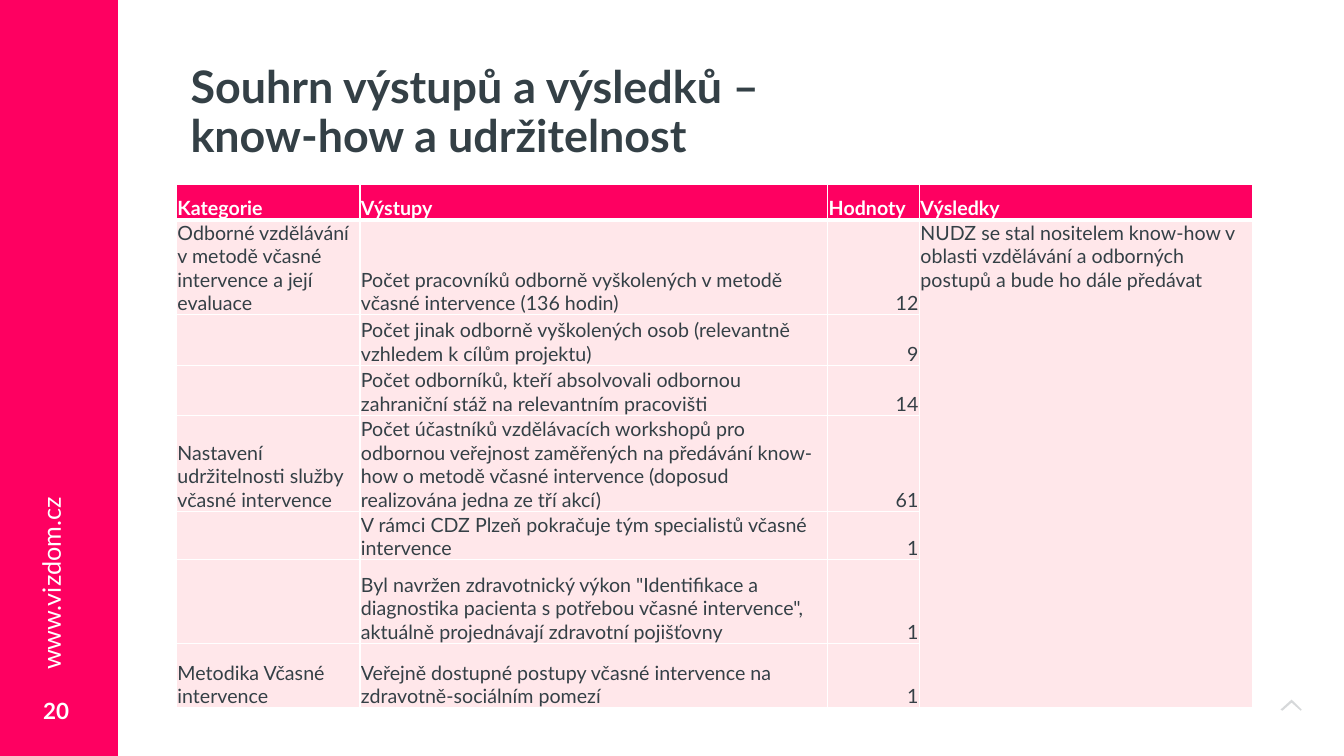
from lxml import etree
from pptx import Presentation
from pptx.dml.color import RGBColor
from pptx.enum import shapes, text
from pptx.oxml import ns
from pptx.util import Inches, Pt

PINK = RGBColor(0xFE, 0x00, 0x61)
BLUSH = RGBColor(0xFF, 0xE7, 0xEA)
SLATE = RGBColor(0x34, 0x40, 0x46)
WHITE = RGBColor(0xFF, 0xFF, 0xFF)

COLS = [1.82, 4.64, 0.91, 3.3]
ROWS = [0.35, 0.94, 0.5, 0.5, 0.95, 0.48, 0.83, 0.64]
HEAD = ["Kategorie", "Výstupy", "Hodnoty", "Výsledky"]
BODY = [
    ["Odborné vzdělávání v metodě včasné intervence a její evaluace",
     "Počet pracovníků odborně vyškolených v metodě včasné intervence (136 hodin)", "12",
     "NUDZ se stal nositelem know-how v oblasti vzdělávání a odborných postupů "
     "a bude ho dále předávat"],
    ["", "Počet jinak odborně vyškolených osob (relevantně vzhledem k cílům projektu)", "9", ""],
    ["", "Počet odborníků, kteří absolvovali odbornou zahraniční stáž "
     "na relevantním pracovišti", "14", ""],
    ["Nastavení udržitelnosti služby včasné intervence",
     "Počet účastníků vzdělávacích workshopů pro odbornou veřejnost zaměřených na předávání "
     "know-how o metodě včasné intervence (doposud realizována jedna ze tří akcí)", "61", ""],
    ["", "V rámci CDZ Plzeň pokračuje tým specialistů včasné intervence", "1", ""],
    ["", "Byl navržen zdravotnický výkon \"Identifikace a diagnostika pacienta s potřebou "
     "včasné intervence\", aktuálně projednávají zdravotní pojišťovny", "1", ""],
    ["Metodika Včasné intervence",
     "Veřejně dostupné postupy včasné intervence na zdravotně-sociálním pomezí", "1", ""],
]
CHEVRON = [(12.81, 6.94), (12.91, 7.04), (12.9, 7.05), (12.81, 6.97), (12.72, 7.05), (12.7, 7.04)]


class Deck:
    font = "Lato"

    def __init__(self, slide):
        self.slide = slide

    def run(self, para, words, size, color, bold=False):
        run = para.add_run()
        run.text = words
        font = run.font
        font.name, font.size, font.bold = self.font, Pt(size), bold
        font.color.rgb = color

    def paint(self, shape, color):
        shape.shadow.inherit = False
        shape.fill.solid()
        shape.fill.fore_color.rgb = color
        shape.line.fill.background()

    def bar(self, x, y, w, h, color):
        box = self.slide.shapes.add_shape(
            shapes.MSO_SHAPE.RECTANGLE, Inches(x), Inches(y), Inches(w), Inches(h))
        self.paint(box, color)

    def outline(self, points, color, alpha):
        """Draw a closed, filled polygon; alpha is the opacity in percent."""
        dots = [(Inches(x), Inches(y)) for x, y in points]
        form = self.slide.shapes.build_freeform(*dots[0])
        form.add_line_segments(dots[1:], close=True)
        shape = form.convert_to_shape()
        self.paint(shape, color)
        tone = shape.fill._xPr.find(".//" + ns.qn("a:srgbClr"))
        etree.SubElement(tone, ns.qn("a:alpha"), val=str(alpha * 1000))

    def label(self, x, y, w, h, lines, size, color, bold=False, turn=0,
              anchor=text.MSO_ANCHOR.TOP, inset=0.1, space=1.0):
        box = self.slide.shapes.add_textbox(Inches(x), Inches(y), Inches(w), Inches(h))
        box.rotation = turn
        frame = box.text_frame
        frame.word_wrap = True
        frame.vertical_anchor = anchor
        frame.margin_left = frame.margin_right = Inches(inset)
        para = frame.paragraphs[0]
        para.line_spacing = space
        for i, line in enumerate(lines):
            if i:
                para.add_line_break()
            self.run(para, line, size, color, bold)

    def edge(self, cell, widths):
        """Set white borders; widths are points for left, right, top, bottom."""
        props = cell._tc.get_or_add_tcPr()
        for side, width in zip("LRTB", widths):
            line = etree.SubElement(props, ns.qn("a:ln" + side), w=str(Pt(width)))
            fill = etree.SubElement(line, ns.qn("a:solidFill"))
            etree.SubElement(fill, ns.qn("a:srgbClr"), val=str(WHITE))

    def table(self, x, y, cols, rows, data):
        grid = self.slide.shapes.add_table(
            len(rows), len(cols), Inches(x), Inches(y),
            Inches(sum(cols)), Inches(sum(rows))).table
        grid.first_row = grid.horz_banding = False
        for col, width in zip(grid.columns, cols):
            col.width = Inches(width)
        for row, height in zip(grid.rows, rows):
            row.height = Inches(height)
        for r, line in enumerate(data):
            for c, words in enumerate(line):
                self.cell(grid.cell(r, c), words, r, c)
        last = len(cols) - 1
        grid.cell(1, last).merge(grid.cell(len(rows) - 1, last))
        grid.cell(1, last).vertical_anchor = text.MSO_ANCHOR.TOP

    def cell(self, cell, words, r, c):
        head = r == 0
        self.edge(cell, (1, 1, 3 if r == 1 else 1, 3 if head else 1))
        cell.fill.solid()
        cell.fill.fore_color.rgb = PINK if head else BLUSH
        cell.margin_left = cell.margin_right = cell.margin_top = Inches(0.01)
        cell.margin_bottom = 0
        cell.vertical_anchor = text.MSO_ANCHOR.BOTTOM
        para = cell.text_frame.paragraphs[0]
        if c == 2 and not head:
            para.alignment = text.PP_ALIGN.RIGHT
        if words:
            self.run(para, words, 14, WHITE if head else SLATE, head)


def main():
    show = Presentation()
    show.slide_width, show.slide_height = Inches(13.33), Inches(7.5)
    deck = Deck(show.slides.add_slide(show.slide_layouts[6]))
    middle = text.MSO_ANCHOR.MIDDLE
    deck.outline(CHEVRON, SLATE, 20)
    deck.bar(0, 0, 1.17, 7.59, PINK)
    deck.label(0.33, 6.75, 0.5, 0.6, ["20"], 16, WHITE, True, anchor=middle)
    deck.label(-0.68, 5.35, 2.38, 0.41, ["www.vizdom.cz"], 18, WHITE, turn=270)
    deck.label(1.89, 0.4, 10.53, 1.45,
               ["Souhrn výstupů a výsledků – ", "know-how a udržitelnost"],
               32, SLATE, True, anchor=middle, inset=0, space=0.9)
    deck.table(1.75, 1.83, COLS, ROWS, [HEAD] + BODY)
    show.save("out.pptx")


if __name__ == "__main__":
    main()
